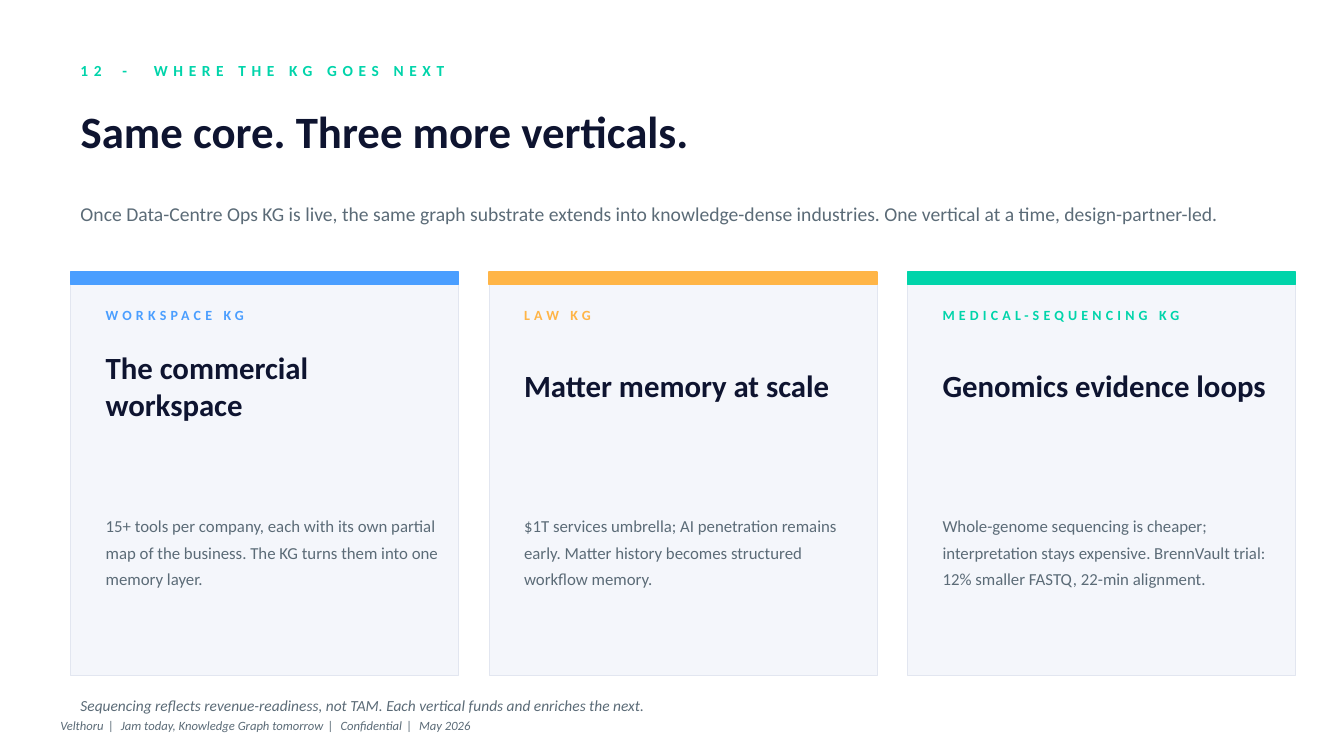
"""Build the slide on the next three knowledge-graph verticals."""
from pptx import Presentation
from pptx.dml.color import RGBColor
from pptx.enum.shapes import MSO_SHAPE
from pptx.enum.text import MSO_ANCHOR, MSO_AUTO_SIZE, PP_ALIGN
from pptx.util import Inches, Pt

RECTANGLE = MSO_SHAPE.RECTANGLE
MIDDLE = MSO_ANCHOR.MIDDLE
NO_AUTOFIT = MSO_AUTO_SIZE.NONE
LEFT = PP_ALIGN.LEFT

NAVY = RGBColor(0x0E, 0x14, 0x30)
SLATE = RGBColor(0x5B, 0x6B, 0x77)
TEAL = RGBColor(0x00, 0xD4, 0xAA)
BLUE = RGBColor(0x4A, 0x9E, 0xFF)
AMBER = RGBColor(0xFF, 0xB5, 0x47)
CARD_FILL = RGBColor(0xF4, 0xF6, 0xFB)
CARD_EDGE = RGBColor(0xE2, 0xE6, 0xF0)

MARGIN = 0.7
CARD_TOP, CARD_WIDTH, CARD_HEIGHT, CARD_GAP = 2.7, 3.85, 4, 0.3
BAND_HEIGHT = 0.12
CARD_INSET, CARD_TEXT_WIDTH = 0.25, 3.5

EYEBROW = {"size": Pt(11), "bold": True}
HEADLINE = {"size": Pt(32), "bold": True}
LEAD = {"size": Pt(14)}
CARD_LABEL = {"size": Pt(10), "bold": True}
CARD_HEADING = {"size": Pt(22), "bold": True}
CARD_BODY = {"size": Pt(12)}
CLOSING = {"size": Pt(11), "italic": True}
FOOTER = {"size": Pt(9), "italic": True}

VERTICALS = [
    (BLUE, "WORKSPACE KG", "The commercial workspace",
     "15+ tools per company, each with its own partial map of the business. "
     "The KG turns them into one memory layer."),
    (AMBER, "LAW KG", "Matter memory at scale",
     "$1T services umbrella; AI penetration remains early. "
     "Matter history becomes structured workflow memory."),
    (TEAL, "MEDICAL-SEQUENCING KG", "Genomics evidence loops",
     "Whole-genome sequencing is cheaper; interpretation stays expensive. "
     "BrennVault trial: 12% smaller FASTQ, 22-min alignment."),
]


def inches(*lengths):
    """Convert plain numbers to slide lengths."""
    return [Inches(length) for length in lengths]


def add_run(paragraph, text, style, color, tracking):
    """Add one formatted run with letter spacing in points."""
    run = paragraph.add_run()
    run.text = text
    run.font.name = "Calibri"
    run.font.color.rgb = color
    for attribute, value in style.items():
        setattr(run.font, attribute, value)
    if tracking:
        run._r.get_or_add_rPr().set("spc", str(round(tracking * 100)))


def write(frame, parts, style, color, tracking=0, leading=None,
          separator="", separator_tracking=0):
    """Fill a text frame with parts joined by a widely spaced separator."""
    frame.word_wrap = True
    frame.auto_size = NO_AUTOFIT
    frame.vertical_anchor = MIDDLE
    paragraph = frame.paragraphs[0]
    paragraph.alignment = LEFT
    if leading:
        paragraph.line_spacing = Pt(leading)
    for position, part in enumerate(parts):
        if position:
            add_run(paragraph, separator, style, color, separator_tracking)
        add_run(paragraph, part, style, color, tracking)


def add_label(slide, box, parts, style, color, **spacing):
    """Add a text box holding one paragraph."""
    label = slide.shapes.add_textbox(*inches(*box))
    write(label.text_frame, parts, style, color, **spacing)


def add_headline(slide, box, text):
    """Place and format the title placeholder."""
    headline = slide.shapes.title
    headline.left, headline.top, headline.width, headline.height = inches(*box)
    write(headline.text_frame, [text], HEADLINE, NAVY)


def add_panel(slide, box, fill, edge, edge_width):
    """Add a flat outlined rectangle."""
    panel = slide.shapes.add_shape(RECTANGLE, *inches(*box))
    panel.shadow.inherit = False
    panel.fill.solid()
    panel.fill.fore_color.rgb = fill
    panel.line.color.rgb = edge
    panel.line.width = Pt(edge_width)


def add_vertical(slide, left, accent, label, heading, body):
    """Add the card of one vertical with its accent band and texts."""
    add_panel(slide, (left, CARD_TOP, CARD_WIDTH, CARD_HEIGHT),
              CARD_FILL, CARD_EDGE, 0.5)
    add_panel(slide, (left, CARD_TOP, CARD_WIDTH, BAND_HEIGHT),
              accent, accent, 1)
    text_left = left + CARD_INSET
    add_label(slide, (text_left, 2.95, CARD_TEXT_WIDTH, 0.35), [label],
              CARD_LABEL, accent, tracking=3)
    add_label(slide, (text_left, 3.35, CARD_TEXT_WIDTH, 0.95), [heading],
              CARD_HEADING, NAVY)
    add_label(slide, (text_left, 4.4, CARD_TEXT_WIDTH, 2.1), [body],
              CARD_BODY, SLATE, leading=19)


def main():
    """Build and save the slide."""
    deck = Presentation()
    deck.slide_width, deck.slide_height = inches(13.33, 7.5)
    slide = deck.slides.add_slide(deck.slide_layouts.get_by_name("Title Only"))

    add_label(slide, (MARGIN, 0.55, 8, 0.3), ["12", "WHERE THE KG GOES NEXT"],
              EYEBROW, TEAL, tracking=4, separator=" - ",
              separator_tracking=8.3)
    add_headline(slide, (MARGIN, 0.95, 12, 0.7),
                 "Same core. Three more verticals.")
    add_label(slide, (MARGIN, 1.75, 12, 0.7),
              ["Once Data-Centre Ops KG is live, the same graph substrate "
               "extends into knowledge-dense industries. "
               "One vertical at a time, design-partner-led."],
              LEAD, SLATE, leading=20)

    for column, vertical in enumerate(VERTICALS):
        left = MARGIN + column * (CARD_WIDTH + CARD_GAP)
        add_vertical(slide, left, *vertical)

    add_label(slide, (MARGIN, 6.85, 12, 0.3),
              ["Sequencing reflects revenue-readiness, not TAM. "
               "Each vertical funds and enriches the next."], CLOSING, SLATE)
    add_label(slide, (0.5, 7.05, 12.3, 0.3),
              ["Velthoru", "Jam today, Knowledge Graph tomorrow",
               "Confidential", "May 2026"],
              FOOTER, SLATE, separator=" | ", separator_tracking=1.36)

    deck.save("out.pptx")


if __name__ == "__main__":
    main()
